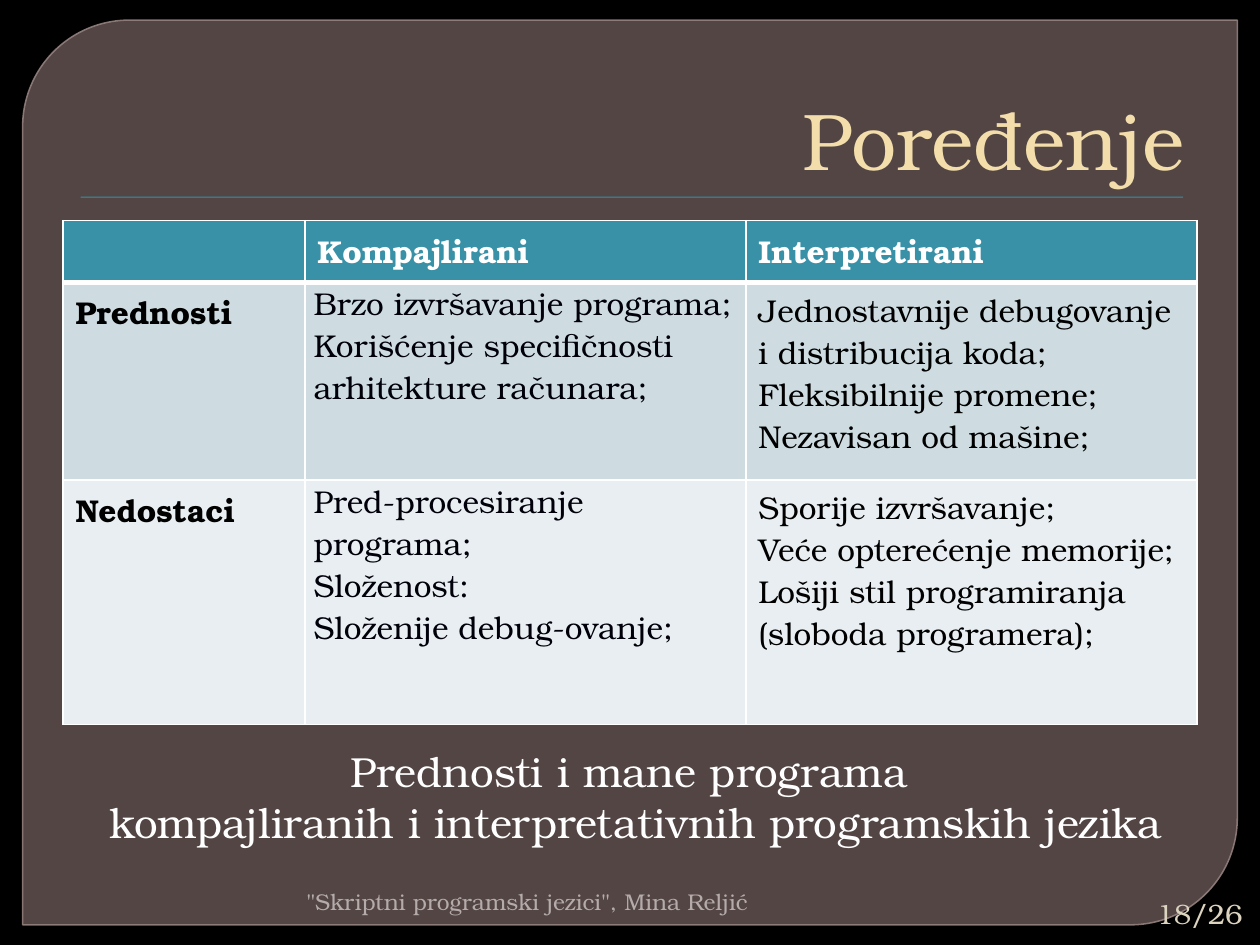
from lxml.etree import SubElement as Sub
from pptx import Presentation
from pptx.dml.color import RGBColor
from pptx.enum.shapes import MSO_SHAPE as Shape
from pptx.enum.text import MSO_ANCHOR as Anchor, PP_ALIGN as Align
from pptx.oxml.ns import qn
from pptx.util import Inches, Pt

FONT = "TeX Gyre Bonum"
WHITE, BLACK, INK, TEAL = "FFFFFF", "000000", "00000A", "3891A7"
COLS = [1.92, 3.5, 3.58]
ROWS = [0.49, 1.57, 1.94]
FILLS = [TEAL, "CEDCE1", "E8EEF1"]
CELLS = [
    ["", "Kompajlirani", "Interpretirani"],
    [
        "Prednosti",
        "Brzo izvršavanje programa;\nKorišćenje specifičnosti\narhitekture računara;",
        "Jednostavnije debugovanje\ni distribucija koda;\n"
        "Fleksibilnije promene;\nNezavisan od mašine;",
    ],
    [
        "Nedostaci",
        "Pred-procesiranje\nprograma;\nSloženost:\nSloženije debug-ovanje;",
        "Sporije izvršavanje;\nVeće opterećenje memorije;\n"
        "Lošiji stil programiranja\n(sloboda programera);",
    ],
]


def paint(target, color):
    target.solid()
    target.fore_color.rgb = RGBColor.from_string(color)


def fade(part, alpha):
    tone = next(part.iter(qn("a:srgbClr")))
    Sub(tone, qn("a:alpha"), val=str(alpha * 1000))


def write(frame, text, size=18, color=WHITE, bold=False, align=Align.LEFT):
    frame.text = text
    for para in frame.paragraphs:
        para.alignment = align
        para.font.size = Pt(size)
        for run in para.runs:
            font = run.font
            font.name = FONT
            font.size = Pt(size)
            font.bold = bold
            font.color.rgb = RGBColor.from_string(color)


def add_box(slide, area, text, anchor=Anchor.TOP, **style):
    frame = slide.shapes.add_textbox(*map(Inches, area)).text_frame
    frame.word_wrap = True
    frame.vertical_anchor = anchor
    write(frame, text, **style)


def add_block(slide, kind, area, color):
    block = slide.shapes.add_shape(kind, *map(Inches, area))
    block.shadow.inherit = False
    paint(block.fill, color)
    block.line.fill.background()
    return block


def add_panel(slide):
    panel = add_block(slide, Shape.ROUND_2_DIAG_RECTANGLE,
                      (0.18, 0.16, 9.64, 7.18), "7F6B69")
    panel.adjustments[0] = 0.118
    panel.adjustments[1] = 0
    fade(panel.element.spPr.find(qn("a:solidFill")), 65)
    paint(panel.line.fill, "968381")
    panel.line.width = Pt(0.87)
    fade(panel.element.spPr.find(qn("a:ln")), 88)


def add_title(slide, text):
    title = slide.shapes.title
    title.left, title.top = Inches(0.5), Inches(0.28)
    title.width, title.height = Inches(9), Inches(1.25)
    title.text_frame.vertical_anchor = Anchor.BOTTOM
    write(title.text_frame, text, size=46, color="F2DDAB", align=Align.RIGHT)
    title.element.getparent().append(title.element)


def edge(cell, **widths):
    props = cell._tc.get_or_add_tcPr()
    for side in "LRTB":
        line = Sub(props, qn("a:ln" + side), w=str(Pt(widths.get(side, 1))))
        Sub(Sub(line, qn("a:solidFill")), qn("a:srgbClr"), val=WHITE)


def fill_cell(cell, row, col):
    if row == 0:
        edge(cell, B=3)
    elif row == 1:
        edge(cell, T=3)
    else:
        edge(cell)
    paint(cell.fill, FILLS[row])
    inner = row > 0 and col == 1
    side, end = (0.07, 0) if inner else (0.1, 0.05)
    cell.margin_left = cell.margin_right = Inches(side)
    cell.margin_top = cell.margin_bottom = Inches(end)
    color = WHITE if row == 0 else INK if inner else BLACK
    write(cell.text_frame, CELLS[row][col], color=color,
          bold=row == 0 or col == 0)


def add_grid(slide):
    area = map(Inches, (0.5, 1.75, sum(COLS), sum(ROWS)))
    grid = slide.shapes.add_table(len(ROWS), len(COLS), *area).table
    for col, width in enumerate(COLS):
        grid.columns[col].width = Inches(width)
    for row, height in enumerate(ROWS):
        grid.rows[row].height = Inches(height)
        for col in range(len(COLS)):
            fill_cell(grid.cell(row, col), row, col)


def main():
    deck = Presentation()
    deck.slide_width, deck.slide_height = Inches(10), Inches(7.5)
    slide = deck.slides.add_slide(deck.slide_layouts[5])
    paint(slide.background.fill, BLACK)
    add_panel(slide)
    add_block(slide, Shape.RECTANGLE, (0.64, 1.56, 8.75, 0.01), TEAL)
    add_title(slide, "Poređenje")
    add_grid(slide)
    add_box(slide, (1.42, 7, 4.61, 0.3),
            '"Skriptni programski jezici", Mina Reljić',
            size=13, color="B4ABAA", align=Align.RIGHT)
    add_box(slide, (8.67, 7.08, 1.29, 0.34), "18/26", anchor=Anchor.MIDDLE,
            size=16, color="DDD4C0", align=Align.RIGHT)
    add_box(slide, (0.67, 5.87, 8.75, 1.21),
            "Prednosti i mane programa \v"
            "kompajliranih i interpretativnih programskih jezika",
            size=24, align=Align.CENTER)
    deck.save("out.pptx")


if __name__ == "__main__":
    main()
